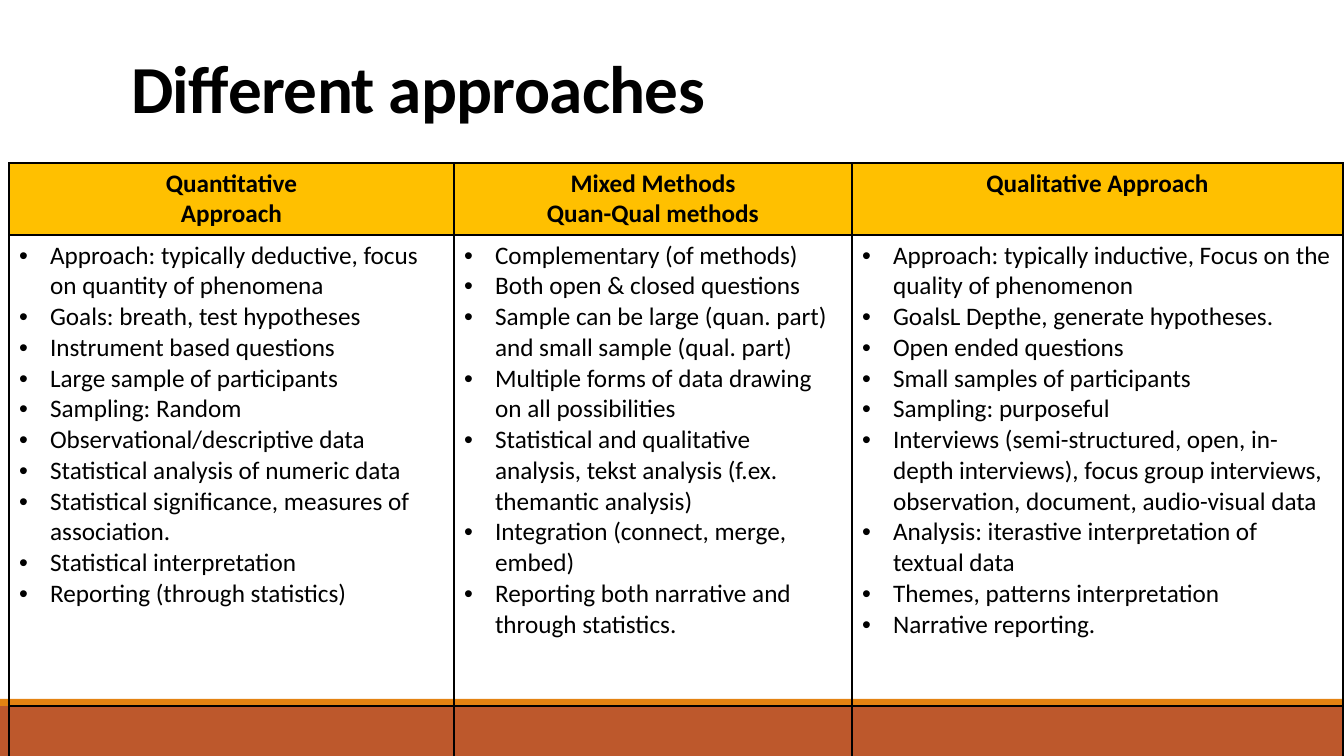
from lxml import etree
from pptx import Presentation
from pptx.dml.color import RGBColor
from pptx.enum.shapes import MSO_SHAPE
from pptx.enum.text import MSO_ANCHOR, MSO_AUTO_SIZE, PP_ALIGN
from pptx.oxml.ns import qn
from pptx.util import Pt

RECTANGLE = MSO_SHAPE.RECTANGLE
BOTTOM = MSO_ANCHOR.BOTTOM
LEFT, CENTER = PP_ALIGN.LEFT, PP_ALIGN.CENTER
NO_AUTOFIT = MSO_AUTO_SIZE.NONE

PX = 9072  # EMU per px, at 100.8 px to the inch
FONT = "Calibri"
COLORS = {"text": "000000", "border": "000000", "header": "FFC000",
          "footer": "BD582C", "stripe": "E48312"}
INDENT = 31 * PX

COLUMNS = [
    (445, ["Quantitative", "Approach"], [
        "Approach: typically deductive, focus on quantity of phenomena",
        "Goals: breath, test hypotheses",
        "Instrument based questions",
        "Large sample of participants",
        "Sampling: Random",
        "Observational/descriptive data",
        "Statistical analysis of numeric data",
        "Statistical significance, measures of association.",
        "Statistical interpretation",
        "Reporting (through statistics)",
    ]),
    (398, ["Mixed Methods", "Quan-Qual methods"], [
        "Complementary (of methods)",
        "Both open & closed questions",
        "Sample can be large (quan. part) and small sample (qual. part)",
        "Multiple forms of data drawing on all possibilities",
        "Statistical and qualitative analysis, tekst analysis (f.ex. themantic analysis)",
        "Integration (connect, merge, embed)",
        "Reporting both narrative and through statistics.",
    ]),
    (491, ["Qualitative Approach"], [
        "Approach: typically inductive, Focus on the quality of phenomenon",
        "GoalsL Depthe, generate hypotheses.",
        "Open ended questions",
        "Small samples of participants",
        "Sampling: purposeful",
        "Interviews (semi-structured, open, in-depth interviews), focus group "
        "interviews, observation, document, audio-visual data",
        "Analysis: iterastive interpretation of textual data",
        "Themes, patterns interpretation",
        "Narrative reporting.",
    ]),
]
ROW_HEIGHTS = [72, 471, 436]


def format_font(font, size, bold):
    font.name = FONT
    font.size = Pt(size)
    font.bold = bold
    font.color.rgb = RGBColor.from_string(COLORS["text"])


def add_borders(cell):
    properties = cell._tc.get_or_add_tcPr()
    for side in ("a:lnL", "a:lnR", "a:lnT", "a:lnB"):
        line = etree.SubElement(properties, qn(side), w=str(Pt(1)))
        fill = etree.SubElement(line, qn("a:solidFill"))
        etree.SubElement(fill, qn("a:srgbClr"), val=COLORS["border"])


deck = Presentation()
deck.slide_width, deck.slide_height = 1344 * PX, 756 * PX
page = deck.slides.add_slide(deck.slide_layouts[5])

# Footer bands
for top, height, color in ((706, 50, "footer"), (699, 7, "stripe")):
    band = page.shapes.add_shape(RECTANGLE, 0, top * PX, 1344 * PX, height * PX)
    band.shadow.inherit = False
    band.fill.solid()
    band.fill.fore_color.rgb = RGBColor.from_string(COLORS[color])
    band.line.fill.background()

# Title
title = page.shapes.title
title.left, title.top, title.width, title.height = (
    121 * PX, 31 * PX, 1109 * PX, 101 * PX)
frame = title.text_frame
frame.text = "Different approaches"
frame.auto_size = NO_AUTOFIT
frame.vertical_anchor = BOTTOM
para = frame.paragraphs[0]
para.alignment = LEFT
para.line_spacing = 0.85
span = para.runs[0]
format_font(span.font, 48, True)
span._r.get_or_add_rPr().set("spc", "-50")

# Comparison table
table_width = sum(width for width, _, _ in COLUMNS)
table = page.shapes.add_table(
    len(ROW_HEIGHTS), len(COLUMNS), 9 * PX, 163 * PX,
    table_width * PX, sum(ROW_HEIGHTS) * PX).table
for row, height in zip(table.rows, ROW_HEIGHTS):
    row.height = height * PX

for index, (width, heading, points) in enumerate(COLUMNS):
    table.columns[index].width = width * PX
    for row_index, lines in enumerate((heading, points, [])):
        cell = table.cell(row_index, index)
        is_header = row_index == 0
        add_borders(cell)
        if is_header:
            cell.fill.solid()
            cell.fill.fore_color.rgb = RGBColor.from_string(COLORS["header"])
        else:
            cell.fill.background()
        if not lines:
            continue
        cell.text_frame.text = "\n".join(lines)
        for para in cell.text_frame.paragraphs:
            format_font(para.runs[0].font, 18, is_header)
            para.alignment = CENTER if is_header else LEFT
            if not is_header:
                layout = para._p.get_or_add_pPr()
                layout.set("marL", str(INDENT))
                layout.set("indent", str(-INDENT))
                etree.SubElement(layout, qn("a:buFont"), typeface="Arial")
                etree.SubElement(layout, qn("a:buChar"), char="•")

deck.save("out.pptx")
